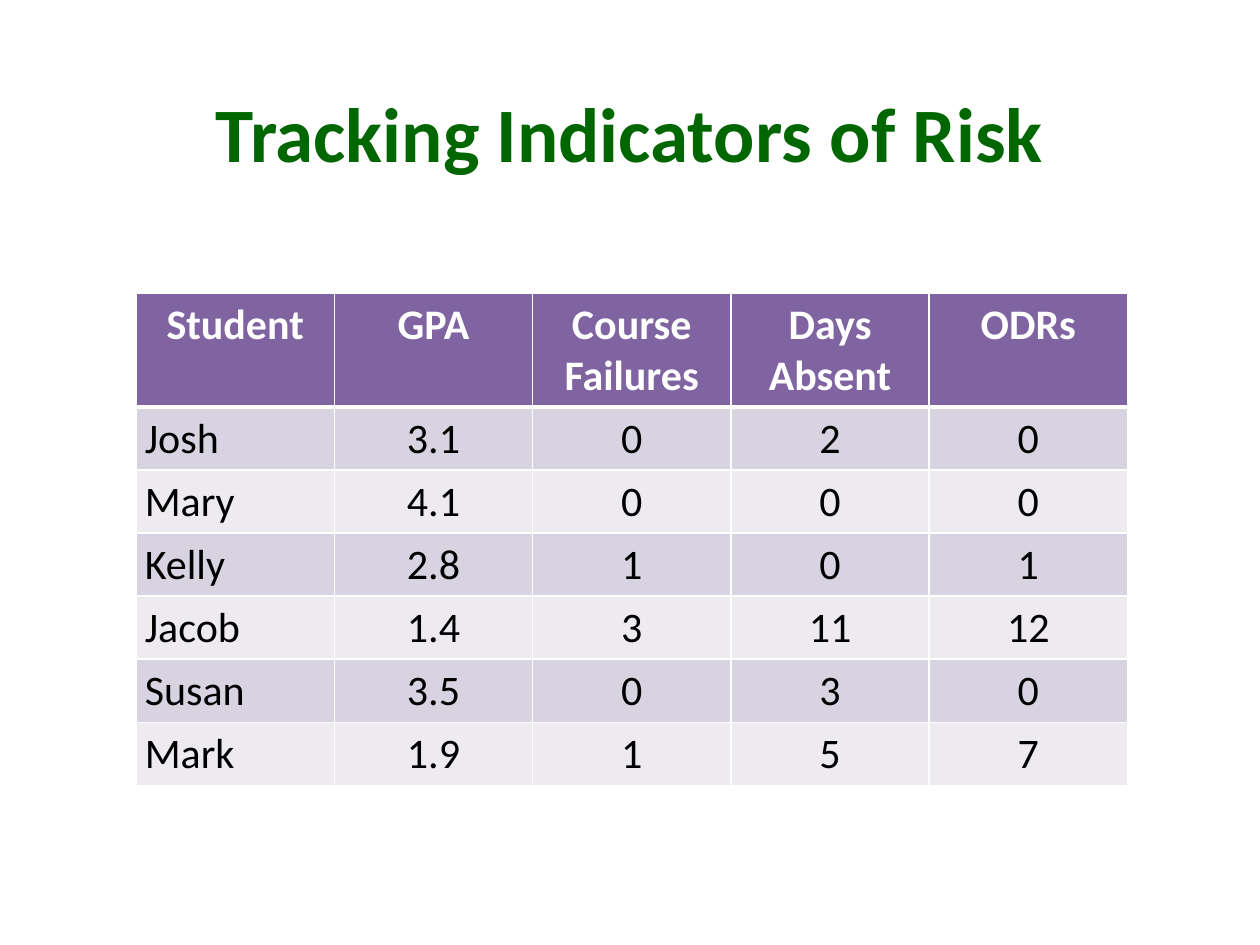
from pptx import Presentation
from pptx.dml.color import RGBColor
from pptx.enum.text import MSO_ANCHOR, PP_ALIGN
from pptx.oxml.ns import qn
from pptx.util import Inches, Pt
from lxml import etree

LEFT, CENTER = PP_ALIGN.LEFT, PP_ALIGN.CENTER
MIDDLE = MSO_ANCHOR.MIDDLE

COLORS = {
    "title": "006600",
    "head": "8064A2",
    "odd": "D8D3E0",
    "even": "EDEAF0",
    "white": "FFFFFF",
    "black": "000000",
}

ROWS = [
    ["Student", "GPA", "Course Failures", "Days Absent", "ODRs"],
    ["Josh", "3.1", "0", "2", "0"],
    ["Mary", "4.1", "0", "0", "0"],
    ["Kelly", "2.8", "1", "0", "1"],
    ["Jacob", "1.4", "3", "11", "12"],
    ["Susan", "3.5", "0", "3", "0"],
    ["Mark", "1.9", "1", "5", "7"],
]


class Deck:
    """Holds the style and the current slide."""

    font = "Calibri"

    def __init__(self, slide):
        self.slide = slide

    def color(self, name):
        return RGBColor.from_string(COLORS[name])

    def label(self, frame, text, size, color, bold, align):
        para = frame.paragraphs[0]
        para.alignment = align
        run = para.add_run()
        run.text = text
        run.font.name = self.font
        run.font.size = Pt(size)
        run.font.bold = bold
        run.font.color.rgb = self.color(color)

    def title(self, text, left, top, width, height):
        box = self.slide.shapes.add_textbox(
            Inches(left), Inches(top), Inches(width), Inches(height))
        frame = box.text_frame
        frame.word_wrap = True
        frame.vertical_anchor = MIDDLE
        self.label(frame, text, 44, "title", True, CENTER)

    def border(self, cell, side, width):
        props = cell._tc.get_or_add_tcPr()
        line = etree.SubElement(props, qn(f"a:ln{side}"), w=str(Pt(width)))
        fill = etree.SubElement(line, qn("a:solidFill"))
        etree.SubElement(fill, qn("a:srgbClr"), val=COLORS["white"])

    def cell(self, cell, text, row, col):
        head = row == 0
        # Borders go before the fill in the cell properties
        thick = {"B": 3} if head else {"T": 3} if row == 1 else {}
        for side in "LRTB":
            self.border(cell, side, thick.get(side, 1))
        cell.fill.solid()
        band = "head" if head else "odd" if row % 2 else "even"
        cell.fill.fore_color.rgb = self.color(band)
        cell.margin_left = cell.margin_right = Inches(0.07)
        cell.margin_top = cell.margin_bottom = Inches(0.05)
        self.label(cell.text_frame, text, 24, "white" if head else "black",
                   head, CENTER if head or col else LEFT)

    def table(self, rows, left, top, width, heights):
        count = len(rows[0])
        table = self.slide.shapes.add_table(
            len(rows), count, Inches(left), Inches(top),
            Inches(width), Inches(sum(heights))).table
        for col in table.columns:
            col.width = Inches(width / count)
        for r, (texts, height) in enumerate(zip(rows, heights)):
            table.rows[r].height = Inches(height)
            for c, text in enumerate(texts):
                self.cell(table.cell(r, c), text, r, c)


def main():
    prs = Presentation()
    prs.slide_width, prs.slide_height = Inches(10), Inches(7.5)
    deck = Deck(prs.slides.add_slide(prs.slide_layouts[6]))

    # Heading
    deck.title("Tracking Indicators of Risk", 0.5, 0.42, 9, 1.25)

    # Student table: a tall header row, then equal rows
    heights = [0.9] + [0.5] * (len(ROWS) - 1)
    deck.table(ROWS, 1.08, 2.33, 7.87, heights)

    prs.save("out.pptx")


if __name__ == "__main__":
    main()
